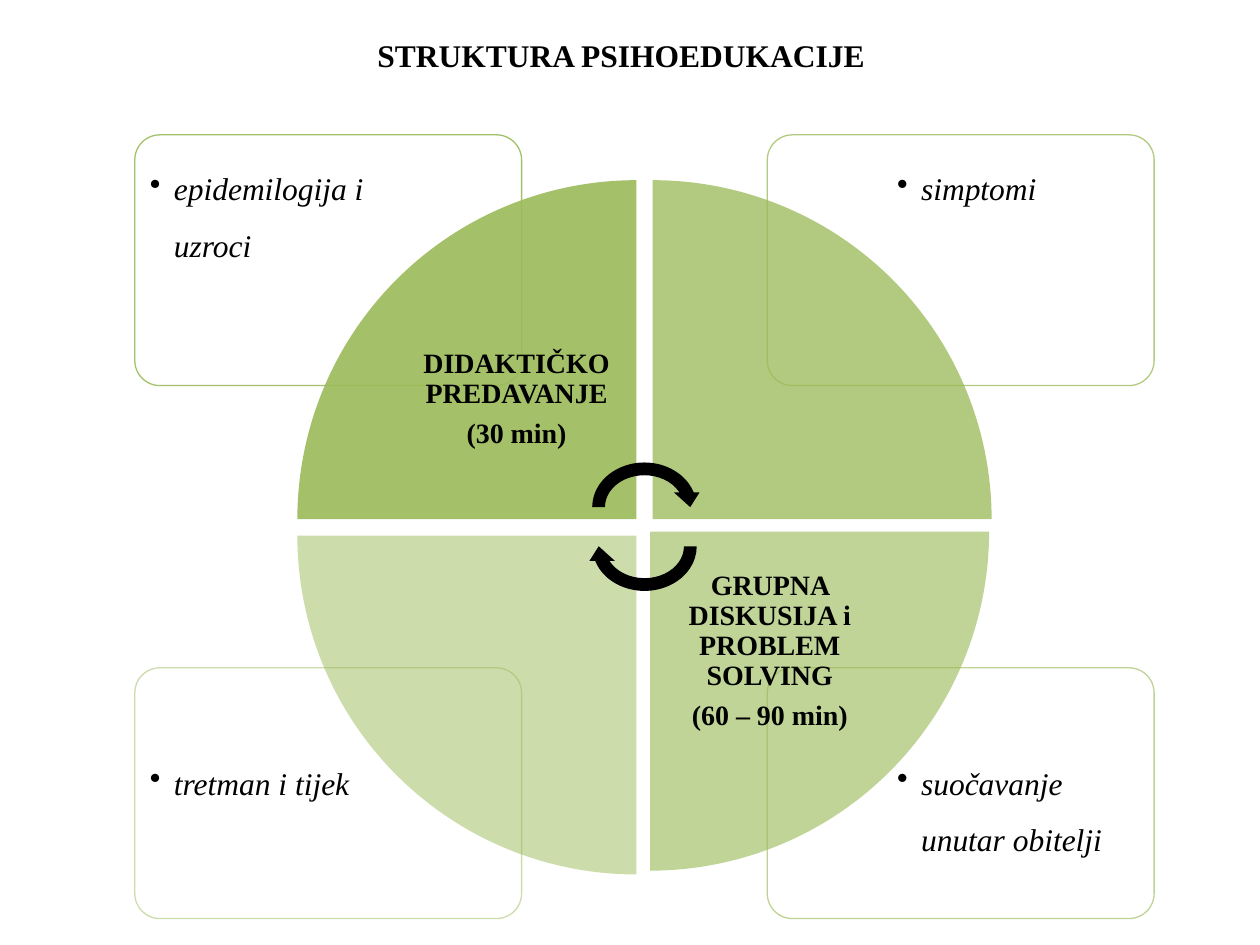
from lxml import etree
from pptx import Presentation, util as u
from pptx.dml.color import RGBColor
from pptx.enum import shapes, text
from pptx.oxml import ns

GREEN = RGBColor(0x9B, 0xBB, 0x59)
WHITE = RGBColor(0xFF, 0xFF, 0xFF)
BLACK = RGBColor(0, 0, 0)
SHAPE = shapes.MSO_SHAPE


def sub(parent, tag, **attrs):
    return etree.SubElement(parent, ns.qn(tag), attrs)


def set_opacity(fill, percent):
    """Make a solid fill, of a shape or a line, partly transparent."""
    color = fill._xPr.find(ns.qn("a:solidFill"))[0]
    sub(color, "a:alpha", val=str(percent * 1000))


def write(tf, lines, size=18, bold=False, italic=False, align=None, anchor="TOP",
          inset=0.1, spacing=1.0, after=0, bullet=False):
    tf.word_wrap = True
    tf.vertical_anchor = text.MSO_ANCHOR[anchor]
    tf.margin_left = tf.margin_right = u.Inches(inset)
    tf.margin_top = tf.margin_bottom = u.Inches(inset)
    for i, line in enumerate(lines):
        p = tf.paragraphs[0] if i == 0 else tf.add_paragraph()
        p.alignment = align
        p.line_spacing = spacing
        p.space_after = u.Pt(after)
        if bullet:
            pPr = p._p.get_or_add_pPr()
            indent = u.Inches(0.19)
            pPr.set("marL", str(indent))
            pPr.set("indent", str(-indent))
            sub(pPr, "a:buChar", char="•")
        r = p.add_run()
        r.text = line
        r.font.name = "Times New Roman"
        r.font.size = u.Pt(size)
        r.font.bold = bold
        r.font.italic = italic
        r.font.color.rgb = BLACK


class CycleSlide:
    def __init__(self, prs):
        self.s = prs.slides.add_slide(prs.slide_layouts[6])

    def shape(self, kind, x, y, w, h, color, opacity=100, rotation=0):
        sp = self.s.shapes.add_shape(kind, *map(u.Inches, (x, y, w, h)))
        sp.shadow.inherit = False
        sp.rotation = rotation
        sp.fill.solid()
        sp.fill.fore_color.rgb = color
        if opacity < 100:
            set_opacity(sp.fill, opacity)
        sp.line.fill.background()
        return sp

    def text(self, x, y, w, h, lines, **style):
        box = self.s.shapes.add_textbox(*map(u.Inches, (x, y, w, h)))
        write(box.text_frame, lines, **style)

    def title(self, line):
        self.text(0.43, -0.19, 9, 1.25, [line], bold=True,
                  align=text.PP_ALIGN.CENTER, anchor="MIDDLE")

    def card(self, x, y, text_x, text_y, line, opacity):
        sp = self.shape(SHAPE.ROUNDED_RECTANGLE, x, y, 3.07, 1.99, WHITE, 90)
        sp.adjustments[0] = 0.1
        sp.line.width = u.Pt(0.75)
        sp.line.color.rgb = GREEN
        set_opacity(sp.line.fill, opacity)
        self.text(text_x, text_y, 2.06, 1.41, [line], italic=True, inset=0.07,
                  spacing=1.5, after=2.7, bullet=True)

    def wedge(self, x, y, rotation, opacity):
        self.shape(SHAPE.PIE_WEDGE, x, y, 2.69, 2.69, GREEN, opacity, rotation)

    def wedge_label(self, x, y, lines):
        self.text(x, y, 1.9, 1.9, lines, size=16, bold=True, inset=0.12,
                  align=text.PP_ALIGN.CENTER, anchor="MIDDLE", spacing=0.9, after=5.6)

    def arrow(self, y, rotation):
        self.shape(SHAPE.CIRCULAR_ARROW, 4.65, y, 0.93, 0.81, BLACK, rotation=rotation)


def main():
    prs = Presentation()
    prs.slide_width, prs.slide_height = u.Inches(10), u.Inches(7.5)
    cycle = CycleSlide(prs)
    cycle.title("STRUKTURA PSIHOEDUKACIJE")

    left, right = (1.07, 1.12), (6.09, 7.05)    # card edge, text edge
    top, bottom = (1.07, 1.12), (5.3, 5.84)
    for column, row, line, opacity in (
            (right, bottom, "suočavanje unutar obitelji", 63),
            (left, bottom, "tretman i tijek", 50),
            (right, top, "simptomi", 77),
            (left, top, "epidemilogija i uzroci", 90)):
        cycle.card(column[0], row[0], column[1], row[1], line, opacity)

    for i, (x, y, opacity) in enumerate((
            (2.36, 1.43, 90), (5.18, 1.43, 77), (5.16, 4.22, 63), (2.36, 4.25, 50))):
        cycle.wedge(x, y, 90 * i, opacity)
    cycle.wedge_label(3.15, 2.22, ["DIDAKTIČKO PREDAVANJE", "(30 min)"])
    cycle.wedge_label(5.16, 4.22, ["GRUPNA DISKUSIJA i PROBLEM SOLVING", "(60 – 90 min)"])

    cycle.arrow(3.62, 0)
    cycle.arrow(3.93, 180)
    prs.save("out.pptx")


if __name__ == "__main__":
    main()
